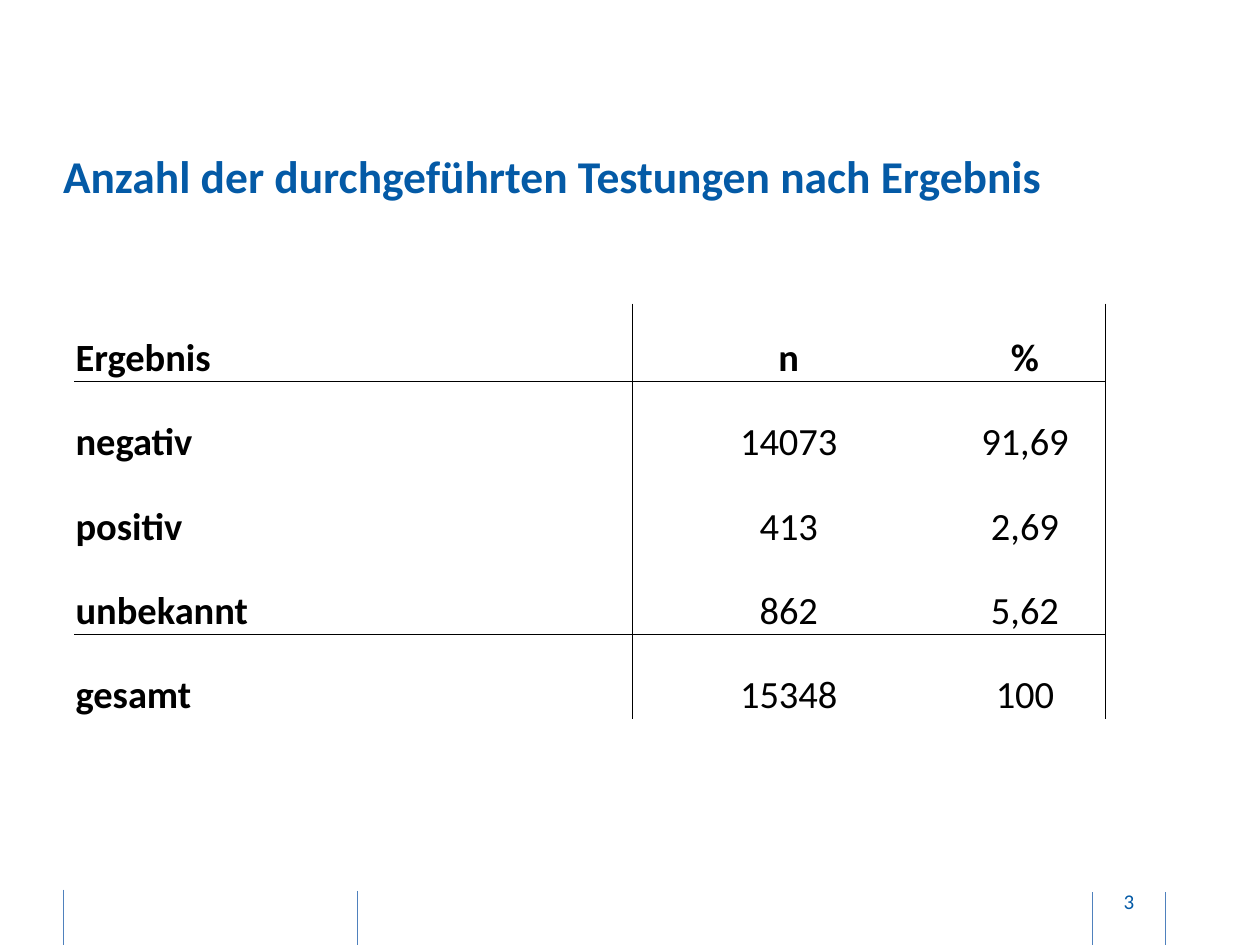
"""Build the slide with the number of tests by result."""
from lxml import etree
from pptx import Presentation
from pptx.dml.color import RGBColor
from pptx.enum.shapes import MSO_CONNECTOR as CONN
from pptx.enum.text import MSO_ANCHOR as ANCHOR, PP_ALIGN as ALIGN
from pptx.oxml.ns import qn
from pptx.util import Inches, Pt

BLUE, BLACK, RULE = "045AA6", "000000", "4F81BD"


def add_run(p, text, size, color, bold=False):
    r = p.add_run()
    r.text = text
    r.font.name = "Calibri"
    r.font.size = Pt(size)
    r.font.bold = bold
    r.font.color.rgb = RGBColor.from_string(color)


def set_borders(cell, sides):
    tcPr = cell._tc.get_or_add_tcPr()
    for i, side in enumerate("LRTB"):
        ln = etree.Element(qn(f"a:ln{side}"), w=str(Pt(0.5)))
        if side in sides:
            fill = etree.SubElement(ln, qn("a:solidFill"))
            etree.SubElement(fill, qn("a:srgbClr"), val=BLACK)
        else:
            etree.SubElement(ln, qn("a:noFill"))
        tcPr.insert(i, ln)


prs = Presentation()
prs.slide_width, prs.slide_height = Inches(10), Inches(7.5)
s = prs.slides.add_slide(prs.slide_layouts[5])

for x, y, height in [(8.67, 7.08, 0.45), (2.84, 7.07, 0.44), (0.5, 7.06, 0.45), (9.25, 7.08, 0.45)]:
    line = s.shapes.add_connector(CONN.STRAIGHT, Inches(x), Inches(y), Inches(x), Inches(y + height))
    line.line.color.rgb = RGBColor.from_string(RULE)
    line.line.width = Pt(0.5)
    etree.SubElement(line._element.spPr, qn("a:effectLst"))

number = s.shapes.add_textbox(Inches(8.69), Inches(6.95), Inches(0.54), Inches(0.4))
tf = number.text_frame
tf.word_wrap = True
tf.vertical_anchor = ANCHOR.MIDDLE
tf.margin_left = tf.margin_right = 0
p = tf.paragraphs[0]
p.alignment = ALIGN.CENTER
add_run(p, "3", 12, BLUE)

title = s.shapes.title
title.left, title.top, title.width, title.height = Inches(0.5), Inches(0.91), Inches(8.73), Inches(0.96)
tf = title.text_frame
tf.vertical_anchor = ANCHOR.MIDDLE
tf.margin_left = tf.margin_right = tf.margin_top = tf.margin_bottom = 0
p = tf.paragraphs[0]
p.alignment = ALIGN.LEFT
add_run(p, "Anzahl der durchgeführten Testungen nach Ergebnis", 26, BLUE, True)

rows = [
    ("Ergebnis", "n", "%"),
    ("negativ", "14073", "91,69"),
    ("positiv", "413", "2,69"),
    ("unbekannt", "862", "5,62"),
    ("gesamt", "15348", "100"),
]
col_widths = [4.43, 2.48, 1.27]
row_heights = [0.62] + [0.67] * 4
frame = s.shapes.add_table(len(rows), len(col_widths), Inches(0.59), Inches(2.41),
                           Inches(sum(col_widths)), Inches(sum(row_heights)))
table = frame.table
table.horz_banding = False
for col, width in zip(table.columns, col_widths):
    col.width = Inches(width)
for row, height in zip(table.rows, row_heights):
    row.height = Inches(height)

col_sides = ["R", "L", "R"]
row_sides = ["B", "T", "", "B", "T"]
for i, values in enumerate(rows):
    for j, value in enumerate(values):
        cell = table.cell(i, j)
        cell.fill.background()
        set_borders(cell, col_sides[j] + row_sides[i])
        cell.vertical_anchor = ANCHOR.BOTTOM
        cell.margin_left = cell.margin_right = cell.margin_top = Inches(0.01)
        cell.margin_bottom = 0
        p = cell.text_frame.paragraphs[0]
        p.alignment = ALIGN.CENTER if j else ALIGN.LEFT
        add_run(p, value, 22, BLACK, i == 0 or j == 0)

prs.save("out.pptx")
